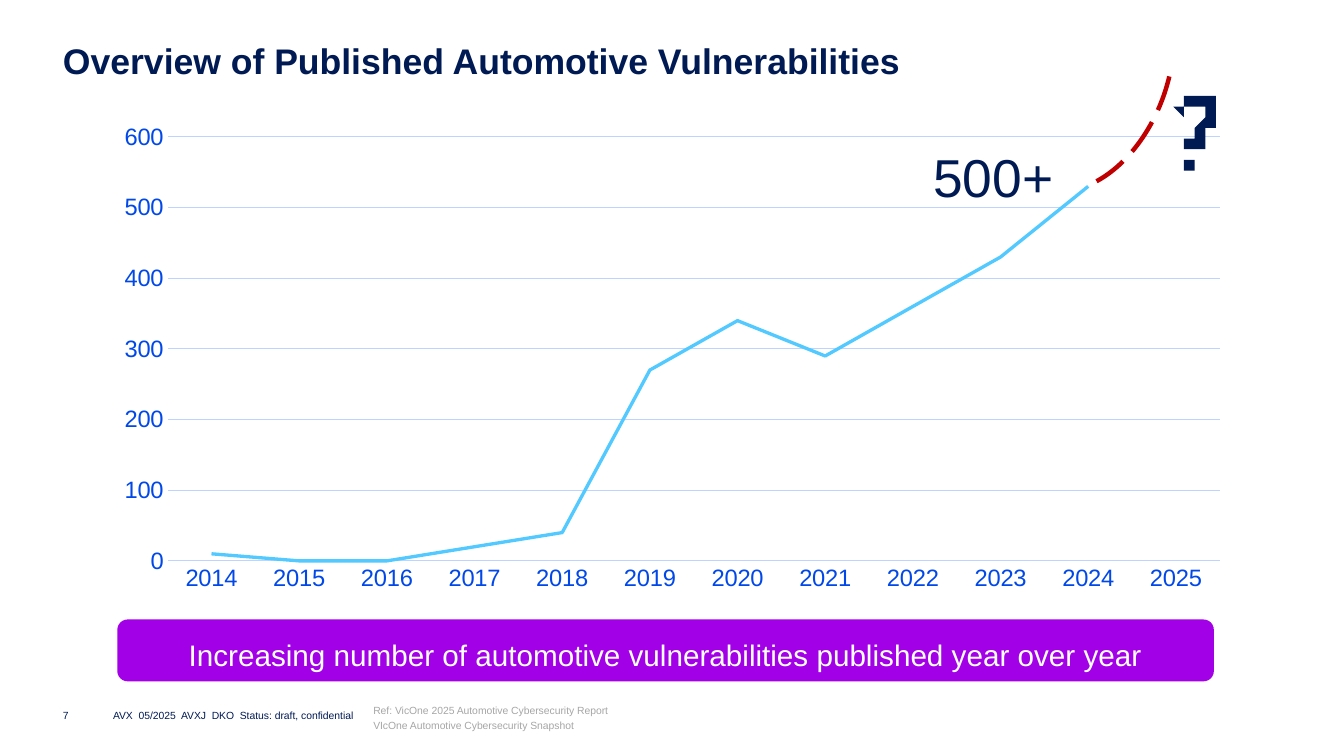
from pptx import Presentation
from pptx.chart.data import CategoryChartData
from pptx.dml.color import RGBColor
from pptx.enum.chart import XL_CHART_TYPE, XL_TICK_MARK
from pptx.enum.dml import MSO_LINE
from pptx.enum.shapes import MSO_SHAPE
from pptx.enum.text import MSO_ANCHOR, PP_ALIGN
from pptx.oxml import parse_xml
from pptx.oxml.ns import nsdecls, qn
from pptx.util import Inches, Pt

COLORS = {"navy": "001A54", "blue": "0048E9", "sky": "52C9FF", "grid": "BFD3FF",
          "violet": "A200E6", "red": "C00000", "grey": "A6A6A6", "white": "FFFFFF"}
FONT = "Arial"
COLUMNS, ROWS = 126, 70.9  # square grid cells
CELL = Inches(0.1)

YEARS = [str(year) for year in range(2014, 2026)]
VULNERABILITIES = [10, 0, 0, 20, 40, 270, 340, 290, 360, 430, 530, None]
PLOT_AREA = {"x": 0.059, "y": 0.045, "w": 0.921, "h": 0.874}  # shares of the chart

# Question mark: a square dot and a hook of lines (1 point) and curves (3 points)
QUESTION_DOT = [(111.3, 14.9), (112.4, 14.9), (112.4, 16.1), (111.3, 16.1)]
QUESTION_HOOK = [
    [(112.2, 8.9)],
    [(112.4, 8.9), (112.6, 9), (112.7, 9)],
    [(113.8, 9.2), (114.4, 10.2), (114.1, 11.3)],
    [(113.8, 12), (112.9, 12.9), (112.6, 13.4)],
    [(112.5, 13.7), (112.4, 13.8), (112.4, 14.3)],
    [(111.3, 14.3)],
    [(111.3, 13.6), (111.2, 13.3), (111.4, 12.9)],
    [(111.7, 12.4), (112.4, 11.8), (112.7, 11.3)],
    [(113, 10.7), (112.8, 10.3), (112.1, 10.2)],
    [(111.6, 10.1), (111.5, 10.4), (111.1, 10.8)],
    [(110.2, 10.1)],
    [(110.3, 10), (110.2, 10), (110.5, 9.7)],
    [(110.9, 9.1), (111.6, 8.9), (112.2, 8.9)],
]


def color(name):
    return RGBColor.from_string(COLORS[name])


def set_font(font, size, ink, bold=False):
    font.name, font.size, font.bold = FONT, Pt(size), bold
    font.color.rgb = color(ink)


def write(frame, text, size=7, ink="navy", bold=False, align=PP_ALIGN.LEFT,
          anchor=MSO_ANCHOR.TOP, spacing=1.0, wrap=True, inset_top=0):
    frame.margin_left = frame.margin_right = frame.margin_bottom = 0
    frame.margin_top = Inches(inset_top)
    frame.word_wrap, frame.vertical_anchor = wrap, anchor
    paragraph = frame.paragraphs[0]
    paragraph.text = text
    paragraph.alignment, paragraph.line_spacing = align, spacing
    paragraph.space_before = Pt(0)
    for run in paragraph.runs:
        set_font(run.font, size, ink, bold)


def flatten(segments, steps=10):
    """Turn lines and cubic curves into one list of points."""
    points = []
    for segment in segments:
        if len(segment) == 1:
            points += segment
            continue
        corners = [points[-1], *segment]
        for step in range(1, steps + 1):
            t = step / steps
            weights = ((1 - t) ** 3, 3 * t * (1 - t) ** 2, 3 * t * t * (1 - t), t ** 3)
            points.append(tuple(sum(w * corner[axis] for w, corner in zip(weights, corners))
                                for axis in (0, 1)))
    return points


class SlideBuilder:
    def __init__(self, deck):
        self.slide = deck.slides.add_slide(deck.slide_layouts[5])
        self.shapes = self.slide.shapes

    def box(self, column, row, width, height):
        return [round(cells * CELL) for cells in (column, row, width, height)]

    def title(self, text, *place, **style):
        heading = self.shapes.title
        heading.left, heading.top, heading.width, heading.height = self.box(*place)
        write(heading.text_frame, text, **style)

    def label(self, text, *place, **style):
        write(self.shapes.add_textbox(*self.box(*place)).text_frame, text, **style)

    def banner(self, text, *place, fill, **style):
        banner = self.shapes.add_shape(MSO_SHAPE.ROUNDED_RECTANGLE, *self.box(*place))
        banner.shadow.inherit = False
        banner.fill.solid()
        banner.fill.fore_color.rgb = color(fill)
        banner.line.fill.background()
        write(banner.text_frame, text, **style)

    def dashed_arc(self, *place, rotation, angles, ink):
        arc = self.shapes.add_shape(MSO_SHAPE.ARC, *self.box(*place))
        arc.shadow.inherit = False
        arc.rotation = rotation
        arc.adjustments[0], arc.adjustments[1] = angles
        arc.fill.background()
        arc.line.color.rgb = color(ink)
        arc.line.width, arc.line.dash_style = Pt(3), MSO_LINE.LONG_DASH

    def outline(self, *contours, fill):
        builder = self.shapes.build_freeform(*contours[0][0], scale=CELL)
        for contour in contours:
            builder.move_to(*contour[0])
            builder.add_line_segments(contour[1:], close=True)
        outline = builder.convert_to_shape()
        outline.shadow.inherit = False
        outline.fill.solid()
        outline.fill.fore_color.rgb = color(fill)
        outline.line.fill.background()

    def line_chart(self, categories, values, *place):
        data = CategoryChartData()
        data.categories = categories
        data.add_series("Series 1", values)
        chart = self.shapes.add_chart(XL_CHART_TYPE.LINE, *self.box(*place), data).chart
        chart.has_legend = chart.has_title = False
        set_font(chart.font, 10, "navy")

        # Axes
        for axis in (chart.category_axis, chart.value_axis):
            axis.major_tick_mark = axis.minor_tick_mark = XL_TICK_MARK.NONE
            axis.format.line.fill.background()
            set_font(axis.tick_labels.font, 16, "blue")
        scale = chart.value_axis
        scale.minimum_scale, scale.maximum_scale, scale.major_unit = 0, 600, 100
        scale.has_major_gridlines = True
        scale.major_gridlines.format.line.color.rgb = color("grid")
        scale.major_gridlines.format.line.width = Pt(0.75)

        # Series
        plot = chart.plots[0]
        plot.vary_by_categories = False
        series = plot.series[0]
        series.smooth = False
        series.format.line.color.rgb = color("sky")
        series.format.line.width = Pt(2.25)

        # Fixed inner plot area
        area = chart._chartSpace.find(".//" + qn("c:plotArea"))
        for layout in area.findall(qn("c:layout")):
            area.remove(layout)
        modes = '<c:xMode val="edge"/><c:yMode val="edge"/>'
        sizes = "".join(f'<c:{side} val="{share}"/>' for side, share in PLOT_AREA.items())
        area.insert(0, parse_xml(
            f'<c:layout {nsdecls("c")}><c:manualLayout><c:layoutTarget val="inner"/>'
            f'{modes}{sizes}</c:manualLayout></c:layout>'))


def main():
    deck = Presentation()
    deck.slide_width, deck.slide_height = round(COLUMNS * CELL), round(ROWS * CELL)
    page = SlideBuilder(deck)

    page.title("Overview of Published Automotive Vulnerabilities", 5.9, 3.9, 114.2, 4,
               size=24, bold=True, spacing=0.97)

    # Trend and its open continuation
    page.line_chart(YEARS, VULNERABILITIES, 9.4, 10.8, 107.1, 45.5)
    page.dashed_arc(90.6, -0.4, 22.8, 14.7, rotation=111.9, angles=(149.86, 200.14), ink="red")
    page.outline(QUESTION_DOT, flatten(QUESTION_HOOK), fill="navy")
    page.label("500+", 87.5, 12.3, 11.8, 6.6, size=36, spacing=1.2)

    # Key message
    page.banner("Increasing number of automotive vulnerabilities published year over year",
                11, 58.1, 102.8, 5.8, fill="violet", size=20, ink="white",
                align=PP_ALIGN.CENTER, anchor=MSO_ANCHOR.MIDDLE, inset_top=0.08)

    # Footer
    footer = {"anchor": MSO_ANCHOR.MIDDLE, "wrap": False}
    page.label("7", 5.9, 66.1, 3.9, 2, **footer)
    page.label("AVX  05/2025  AVXJ  DKO  Status: draft, confidential",
               10.6, 66.1, 23, 2, **footer)
    page.label("Ref: VicOne 2025 Automotive Cybersecurity Report\n"
               "VIcOne Automotive Cybersecurity Snapshot",
               35, 65.8, 85, 2.7, ink="grey", spacing=1.2)

    deck.save("out.pptx")


if __name__ == "__main__":
    main()
